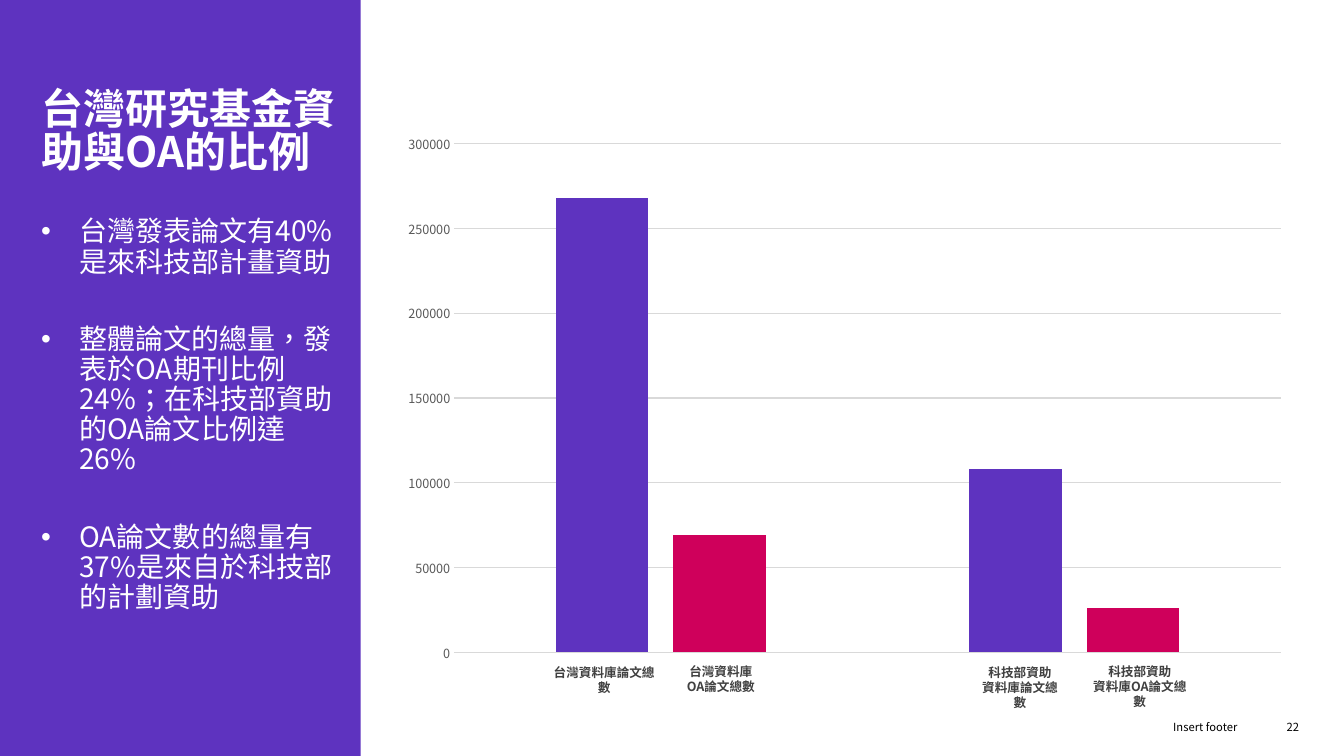
from dataclasses import dataclass

from lxml import etree
from pptx import Presentation
from pptx.chart.data import CategoryChartData
from pptx.dml.color import RGBColor
from pptx.enum.chart import XL_CHART_TYPE, XL_TICK_MARK
from pptx.enum.shapes import MSO_SHAPE
from pptx.enum.text import PP_ALIGN
from pptx.oxml.ns import qn
from pptx.slide import Slide
from pptx.text.text import TextFrame
from pptx.util import Cm, Pt

LEFT, CENTER, RIGHT = PP_ALIGN.LEFT, PP_ALIGN.CENTER, PP_ALIGN.RIGHT
COLUMNS = XL_CHART_TYPE.COLUMN_CLUSTERED
NO_TICK = XL_TICK_MARK.NONE
RECT = MSO_SHAPE.RECTANGLE


@dataclass(frozen=True)
class Theme:
    """Colours, fonts and type sizes in points."""
    purple: str = "5E33BF"
    pink: str = "CF005B"
    white: str = "FFFFFF"
    black: str = "000000"
    label: str = "404040"
    axis: str = "595959"
    grid: str = "D9D9D9"
    panel_font: str = "Noto Sans CJK SC"
    chart_font: str = "Noto Sans CJK TC"
    title_size: int = 30
    body_size: int = 20
    chart_size: int = 10
    label_size: int = 9
    footer_size: int = 8


T = Theme()


@dataclass(frozen=True)
class Style:
    font: str
    size: int
    color: str
    bold: bool = False
    align: PP_ALIGN = LEFT
    pitch: float = 0  # exact line height in points, 0 for automatic
    after: float = 0
    spacing: int = 0  # letter spacing in hundredths of a point
    bullet: bool = False


@dataclass(frozen=True)
class TextBox:
    """Box in centimetres with its paragraphs."""
    x: float
    y: float
    w: float
    h: float
    lines: tuple[str, ...]
    style: Style
    margins: tuple[float, float] = (0, 0)  # side, top
    wrap: bool = True


@dataclass(frozen=True)
class Series:
    name: str
    values: tuple[int, int]
    color: str


TITLE = Style(T.panel_font, T.title_size, T.white, bold=True, pitch=30.7, spacing=10)
BODY = Style(T.panel_font, T.body_size, T.white, pitch=21.5, after=34, bullet=True)
LABEL = Style(T.chart_font, T.label_size, T.label, bold=True, align=CENTER, pitch=10.75)
FOOTER = Style(T.chart_font, T.footer_size, T.black, align=RIGHT)
LABEL_MARGINS = (0.25, 0.15)

TEXTS = (
    TextBox(1.04, 5.38, 7.54, 12.17, (
        "台灣發表論文有40%是來科技部計畫資助",
        "整體論文的總量，發表於OA期刊比例24%；在科技部資助的OA論文比例達26%",
        "OA論文數的總量有37%是來自於科技部的計劃資助",
    ), BODY, (0, 0.1)),
    TextBox(1.04, 2.26, 7.54, 2.18, ("台灣研究基金資助與OA的比例",), TITLE),
    TextBox(31.93, 18.16, 0.81, 0.46, ("22",), FOOTER),
    TextBox(19.76, 18.16, 11.43, 0.51, ("Insert footer",), FOOTER),
)

BAR_LABELS = (
    TextBox(13.61, 16.61, 3.23, 0.64, ("台灣資料庫論文總數",), LABEL, LABEL_MARGINS),
    TextBox(24.41, 16.61, 2.59, 1.02, ("科技部資助", "資料庫論文總數"), LABEL, LABEL_MARGINS, False),
    TextBox(17.02, 16.59, 2.29, 1.02, ("台灣資料庫", "OA論文總數"), LABEL, LABEL_MARGINS, False),
    TextBox(27.15, 16.59, 3.15, 1.02, ("科技部資助", "資料庫OA論文總數"), LABEL, LABEL_MARGINS, False),
)

SERIES = (
    Series("Series 1", (268000, 108000), T.purple),
    Series("Series 2", (69000, 26000), T.pink),
)


def rgb(color: str) -> RGBColor:
    return RGBColor.from_string(color)


def set_all(target: object, formats: dict[str, object]) -> None:
    for name, value in formats.items():
        setattr(target, name, value)


def add_bullet(p_pr: etree._Element) -> None:
    indent = Cm(0.96)
    p_pr.set("marL", str(indent))
    p_pr.set("indent", str(-indent))
    color = etree.SubElement(p_pr, qn("a:buClr"))
    etree.SubElement(color, qn("a:srgbClr"), val=T.white)
    etree.SubElement(p_pr, qn("a:buFont"), typeface="Arial")
    etree.SubElement(p_pr, qn("a:buChar"), char="•")


def add_line(tf: TextFrame, index: int, text: str, style: Style) -> None:
    p = tf.add_paragraph() if index else tf.paragraphs[0]
    p.alignment = style.align
    if style.pitch:
        p.line_spacing = Pt(style.pitch)
    if style.after:
        p.space_after = Pt(style.after)
    if style.bullet:
        add_bullet(p._p.get_or_add_pPr())
    r = p.add_run()
    r.text = text
    set_all(r.font, {"name": style.font, "size": Pt(style.size), "bold": style.bold})
    r.font.color.rgb = rgb(style.color)
    r_pr = r._r.get_or_add_rPr()
    r_pr.set("lang", "zh-TW")
    etree.SubElement(r_pr, qn("a:ea"), typeface=style.font)
    if style.spacing:
        r_pr.set("spc", str(style.spacing))


def add_text(s: Slide, box: TextBox) -> None:
    tf = s.shapes.add_textbox(Cm(box.x), Cm(box.y), Cm(box.w), Cm(box.h)).text_frame
    side, top = map(Cm, box.margins)
    set_all(tf, {"word_wrap": box.wrap, "margin_left": side, "margin_right": side,
                 "margin_top": top, "margin_bottom": 0})
    for index, text in enumerate(box.lines):
        add_line(tf, index, text, box.style)


def add_panel(s: Slide) -> None:
    sp = s.shapes.add_shape(RECT, 0, 0, Cm(9.09), Cm(19.05))
    sp.shadow.inherit = False
    sp.fill.solid()
    sp.fill.fore_color.rgb = rgb(T.purple)
    sp.line.fill.background()


def add_columns(s: Slide) -> None:
    data = CategoryChartData()
    data.categories = ("1", "2")
    for series in SERIES:
        data.add_series(series.name, series.values)
    chart = s.shapes.add_chart(COLUMNS, Cm(9.83), Cm(3.12), Cm(22.91), Cm(13.82), data).chart
    set_all(chart, {"has_legend": False, "has_title": False})
    set_all(chart.font, {"name": T.chart_font, "size": Pt(T.chart_size)})
    chart.font.color.rgb = rgb(T.black)

    # Bars
    plot = chart.plots[0]
    set_all(plot, {"gap_width": 219, "overlap": -27, "vary_by_categories": False})
    for bars, series in zip(plot.series, SERIES):
        bars.format.fill.solid()
        bars.format.fill.fore_color.rgb = rgb(series.color)

    # Axes and gridlines
    chart.category_axis.visible = False
    axis = chart.value_axis
    set_all(axis, {"minimum_scale": 0, "maximum_scale": 300000, "major_unit": 50000,
                   "major_tick_mark": NO_TICK, "minor_tick_mark": NO_TICK,
                   "has_major_gridlines": True})
    axis.format.line.fill.background()
    grid = axis.major_gridlines.format.line
    grid.color.rgb = rgb(T.grid)
    grid.width = Pt(0.75)
    font = axis.tick_labels.font
    set_all(font, {"name": T.chart_font, "size": Pt(T.label_size)})
    font.color.rgb = rgb(T.axis)


def main() -> None:
    prs = Presentation()
    set_all(prs, {"slide_width": Cm(33.87), "slide_height": Cm(19.05)})
    s = prs.slides.add_slide(prs.slide_layouts[6])

    # Side panel, title, bullets and footer
    add_panel(s)
    for box in TEXTS:
        add_text(s, box)

    # Chart with a caption under each bar
    add_columns(s)
    for box in BAR_LABELS:
        add_text(s, box)
    prs.save("out.pptx")


if __name__ == "__main__":
    main()
